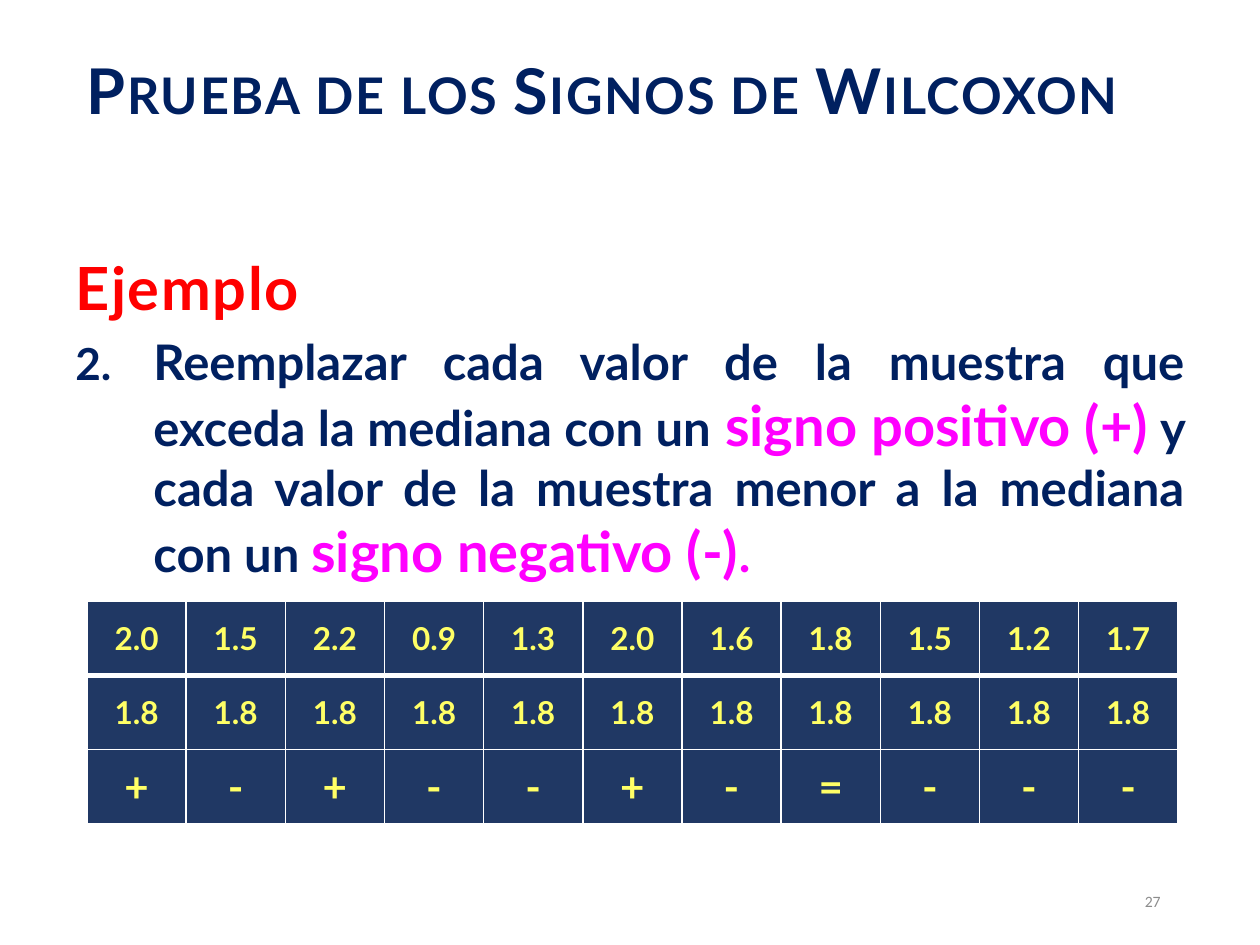
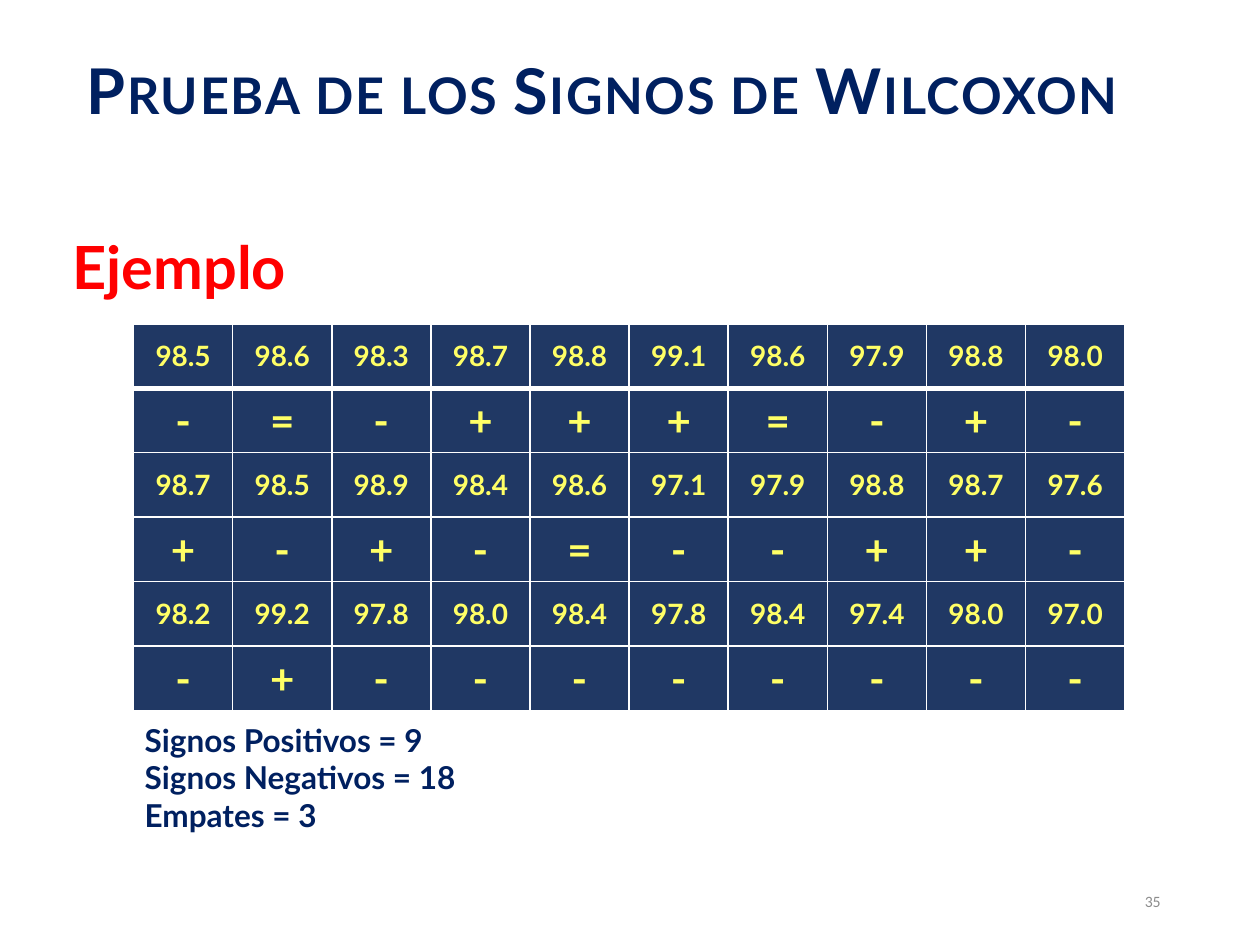
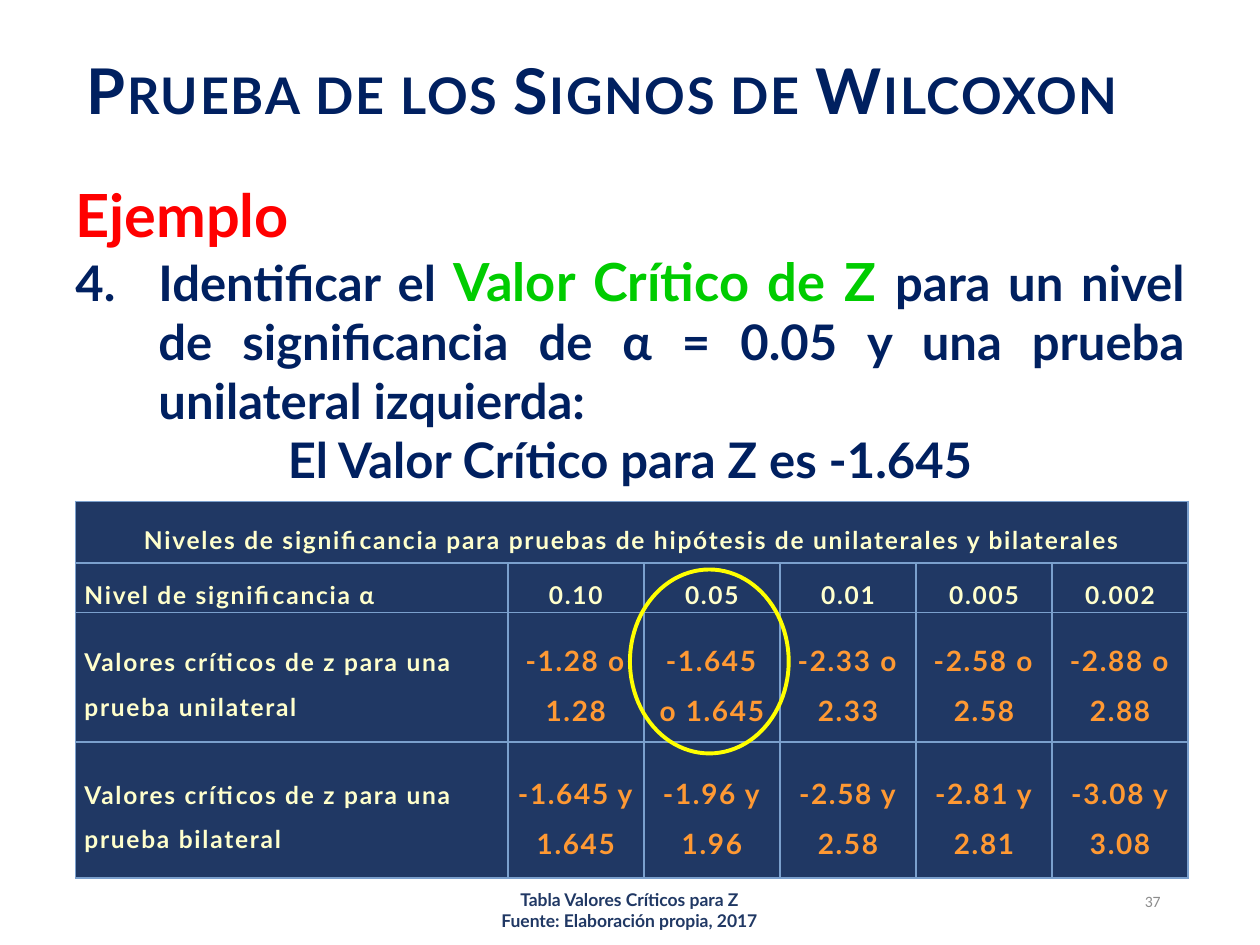
from lxml import etree
from pptx import Presentation
from pptx.dml.color import RGBColor
from pptx.enum.shapes import MSO_SHAPE
from pptx.enum.text import MSO_ANCHOR, PP_ALIGN
from pptx.oxml.ns import qn
from pptx.util import Inches, Pt

LEFT, CENTER, RIGHT, JUSTIFY = PP_ALIGN.LEFT, PP_ALIGN.CENTER, PP_ALIGN.RIGHT, PP_ALIGN.JUSTIFY
TOP, MIDDLE = MSO_ANCHOR.TOP, MSO_ANCHOR.MIDDLE
OVAL = MSO_SHAPE.OVAL

COLORS = {
    "navy": "002060", "red": "FF0000", "magenta": "FF00FF", "green": "00CC00",
    "cell": "203864", "yellow": "FFFF66", "cream": "FFFFCC", "orange": "FF9933",
    "ring": "FFFF00", "white": "FFFFFF", "blue line": "7BA0CD", "gray": "8C8C8C",
}
FONT = "Lato"
SLIDE_WIDTH, SLIDE_HEIGHT = 10, 7.5
TITLE = "Prueba de los Signos de Wilcoxon"
TITLE_BOX = (0.5, 0.26, 9, 0.89)
NUMBER_BOX = (6.62, 6.95, 2.69, 0.4)
HEADING = {"size": 34, "color": "red"}

REPLACE_STEP = [
    ("Reemplazar cada valor de la muestra que exceda la mediana con un", {}),
    (" ", {"size": 32}),
    ("signo positivo (+)", {"size": 32, "color": "magenta"}),
    (" y cada valor de la muestra menor a la mediana con un ", {}),
    ("signo negativo (-)", {"size": 32, "color": "magenta"}),
    (".", {"color": "magenta"}),
]
CRITICAL_STEP = [
    ("Identificar el ", {}),
    ("Valor Crítico de Z ", {"size": 30, "color": "green"}),
    ("para un nivel de significancia de α = 0.05 y una prueba unilateral izquierda:", {}),
]
CRITICAL_RESULT = "El Valor Crítico para Z es -1.645"
MEDIAN_ROWS = [
    "2.0 1.5 2.2 0.9 1.3 2.0 1.6 1.8 1.5 1.2 1.7",
    "1.8 1.8 1.8 1.8 1.8 1.8 1.8 1.8 1.8 1.8 1.8",
    "+ - + - - + - = - - -",
]
SIGN_ROWS = [
    "98.5 98.6 98.3 98.7 98.8 99.1 98.6 97.9 98.8 98.0",
    "- = - + + + = - + -",
    "98.7 98.5 98.9 98.4 98.6 97.1 97.9 98.8 98.7 97.6",
    "+ - + - = - - + + -",
    "98.2 99.2 97.8 98.0 98.4 97.8 98.4 97.4 98.0 97.0",
    "- + - - - - - - - -",
]
SIGN_COUNTS = ["Signos Positivos = 9", "Signos Negativos = 18", "Empates = 3"]
CRITICAL_TITLE = "Niveles de significancia para pruebas de hipótesis de unilaterales y bilaterales"
CRITICAL_ROWS = [
    [CRITICAL_TITLE, "", "", "", "", ""],
    ["Nivel de significancia α", "0.10", "0.05", "0.01", "0.005", "0.002"],
    ["Valores críticos de z para una prueba unilateral", "-1.28 o 1.28", "-1.645 o 1.645",
     "-2.33 o 2.33", "-2.58 o 2.58", "-2.88 o 2.88"],
    ["Valores críticos de z para una prueba bilateral", "-1.645 y 1.645", "-1.96 y 1.96",
     "-2.58 y 2.58", "-2.81 y 2.81", "-3.08 y 3.08"],
]
CRITICAL_COLUMNS = [3.43] + [1.08] * 5
CRITICAL_HEIGHTS = [0.49, 0.39, 1.03, 1.08]
CAPTION = ["Tabla Valores Críticos para Z", "Fuente: Elaboración propia, 2017"]


def rgb(name):
    return RGBColor.from_string(COLORS[name])


def add_run(paragraph, text, size=28, color="navy", font=FONT, bold=True, spacing=0, small_caps=False):
    run = paragraph.add_run()
    run.text = text
    run.font.size, run.font.name, run.font.bold = Pt(size), font, bold
    run.font.color.rgb = rgb(color)
    properties = run.font._element
    if spacing:
        properties.set("spc", str(spacing * 100))
    if small_caps:
        properties.set("cap", "small")


def write_paragraph(frame, content, align=JUSTIFY, before=0, line_spacing=None,
                    hanging=0, first_indent=0, number=None, number_size=100, **run_format):
    """Write a string or a list of (text, format) runs as the next paragraph of a frame."""
    paragraph = frame.paragraphs[0]
    if paragraph.runs:
        paragraph = frame.add_paragraph()
    paragraph.alignment = align
    paragraph.space_before = Pt(before)
    if line_spacing:
        paragraph.line_spacing = line_spacing
    properties = paragraph._p.get_or_add_pPr()
    properties.set("marL", str(Inches(hanging)))
    properties.set("indent", str(Inches(first_indent - hanging)))
    if number:
        etree.SubElement(properties, qn("a:buSzPct"), val=str(number_size * 1000))
        etree.SubElement(properties, qn("a:buFont"), typeface="+mj-lt")
        etree.SubElement(properties, qn("a:buAutoNum"), type="arabicPeriod", startAt=str(number))
    runs = [(content, {})] if isinstance(content, str) else content
    for text, changes in runs:
        add_run(paragraph, text, **{**run_format, **changes})


def add_text_box(slide, box, anchor=TOP):
    frame = slide.shapes.add_textbox(*map(Inches, box)).text_frame
    frame.word_wrap = True
    frame.vertical_anchor = anchor
    return frame


def add_base_slide(presentation, number):
    slide = presentation.slides.add_slide(presentation.slide_layouts[6])
    write_paragraph(add_text_box(slide, TITLE_BOX, MIDDLE), TITLE, align=CENTER,
                    size=36, spacing=1, small_caps=True)
    write_paragraph(add_text_box(slide, NUMBER_BOX, MIDDLE), str(number), align=RIGHT,
                    size=9, color="gray", font="Calibri", bold=False)
    return slide


def add_grid(slide, left, top, columns, heights):
    frame = slide.shapes.add_table(len(heights), len(columns), Inches(left), Inches(top),
                                   Inches(sum(columns)), Inches(sum(heights)))
    table = frame.table
    table.first_row = table.horz_banding = False
    for column, width in zip(table.columns, columns):
        column.width = Inches(width)
    for row, height in zip(table.rows, heights):
        row.height = Inches(height)
    return table


def style_cell(cell, border, top=1, bottom=1):
    cell.vertical_anchor = MIDDLE
    properties = cell._tc.get_or_add_tcPr()
    for side, width in (("L", 1), ("R", 1), ("T", top), ("B", bottom)):
        line = etree.SubElement(properties, qn(f"a:ln{side}"), w=str(Pt(width)))
        fill = etree.SubElement(line, qn("a:solidFill"))
        etree.SubElement(fill, qn("a:srgbClr"), val=COLORS[border])
    cell.fill.solid()
    cell.fill.fore_color.rgb = rgb("cell")


def add_sign_table(slide, box, lines, size):
    left, top, width, height = box
    rows = [line.split() for line in lines]
    column_count, row_count = len(rows[0]), len(rows)
    table = add_grid(slide, left, top, [width / column_count] * column_count,
                     [height / row_count] * row_count)
    for row_index, row in enumerate(rows):
        for column_index, text in enumerate(row):
            cell = table.cell(row_index, column_index)
            style_cell(cell, "white", top=3 if row_index == 1 else 1,
                       bottom=3 if row_index == 0 else 1)
            write_paragraph(cell.text_frame, text, align=CENTER, color="yellow",
                            size=24 if text in "+-=" else size)


def add_critical_table(slide, left, top):
    table = add_grid(slide, left, top, CRITICAL_COLUMNS, CRITICAL_HEIGHTS)
    table.cell(0, 0).merge(table.cell(0, len(CRITICAL_COLUMNS) - 1))
    for row_index, row in enumerate(CRITICAL_ROWS):
        for column_index, text in enumerate(row):
            cell = table.cell(row_index, column_index)
            style_cell(cell, "blue line")
            cell.margin_left = cell.margin_right = Inches(0.07)
            cell.margin_top = cell.margin_bottom = 0
            if not text:
                continue
            is_value = row_index > 1 and column_index > 0
            is_label = row_index > 0 and column_index == 0
            write_paragraph(cell.text_frame, text, align=LEFT if is_label else CENTER,
                            line_spacing=1.5, spacing=1, size=16 if is_value else 14,
                            color="orange" if is_value else "cream")


def add_ring(slide, box):
    ring = slide.shapes.add_shape(OVAL, *map(Inches, box))
    ring.shadow.inherit = False
    ring.fill.background()
    ring.line.color.rgb = rgb("ring")
    ring.line.width = Pt(2.25)


def build_replacement_slide(presentation):
    slide = add_base_slide(presentation, 27)
    body = add_text_box(slide, (0.5, 1.94, 9, 2.89))
    write_paragraph(body, "Ejemplo", spacing=1, **HEADING)
    write_paragraph(body, REPLACE_STEP, before=5.6, hanging=0.62, number=2, number_size=90)
    add_sign_table(slide, (0.69, 4.77, 8.66, 1.77), MEDIAN_ROWS, 18)


def build_count_slide(presentation):
    slide = add_base_slide(presentation, 35)
    write_paragraph(add_text_box(slide, (0.48, 1.78, 9, 0.71)), "Ejemplo", **HEADING)
    add_sign_table(slide, (1.06, 2.57, 7.87, 3.07), SIGN_ROWS, 16)
    counts = add_text_box(slide, (1.05, 5.67, 4.42, 1.08))
    for line in SIGN_COUNTS:
        write_paragraph(counts, line, size=18)


def build_critical_slide(presentation):
    slide = add_base_slide(presentation, 37)
    body = add_text_box(slide, (0.5, 1.36, 9, 2.55))
    write_paragraph(body, "Ejemplo", **HEADING)
    write_paragraph(body, CRITICAL_STEP, hanging=0.66, number=4)
    write_paragraph(body, CRITICAL_RESULT, align=CENTER, first_indent=-0.15)
    add_critical_table(slide, 0.6, 3.98)
    add_ring(slide, (5, 4.52, 1.26, 1.46))
    caption = add_text_box(slide, (2.98, 7.01, 4.03, 0.44))
    for line in CAPTION:
        write_paragraph(caption, line, align=CENTER, size=10, color="cell")


def main():
    presentation = Presentation()
    presentation.slide_width = Inches(SLIDE_WIDTH)
    presentation.slide_height = Inches(SLIDE_HEIGHT)
    build_replacement_slide(presentation)
    build_count_slide(presentation)
    build_critical_slide(presentation)
    presentation.save("out.pptx")


if __name__ == "__main__":
    main()
